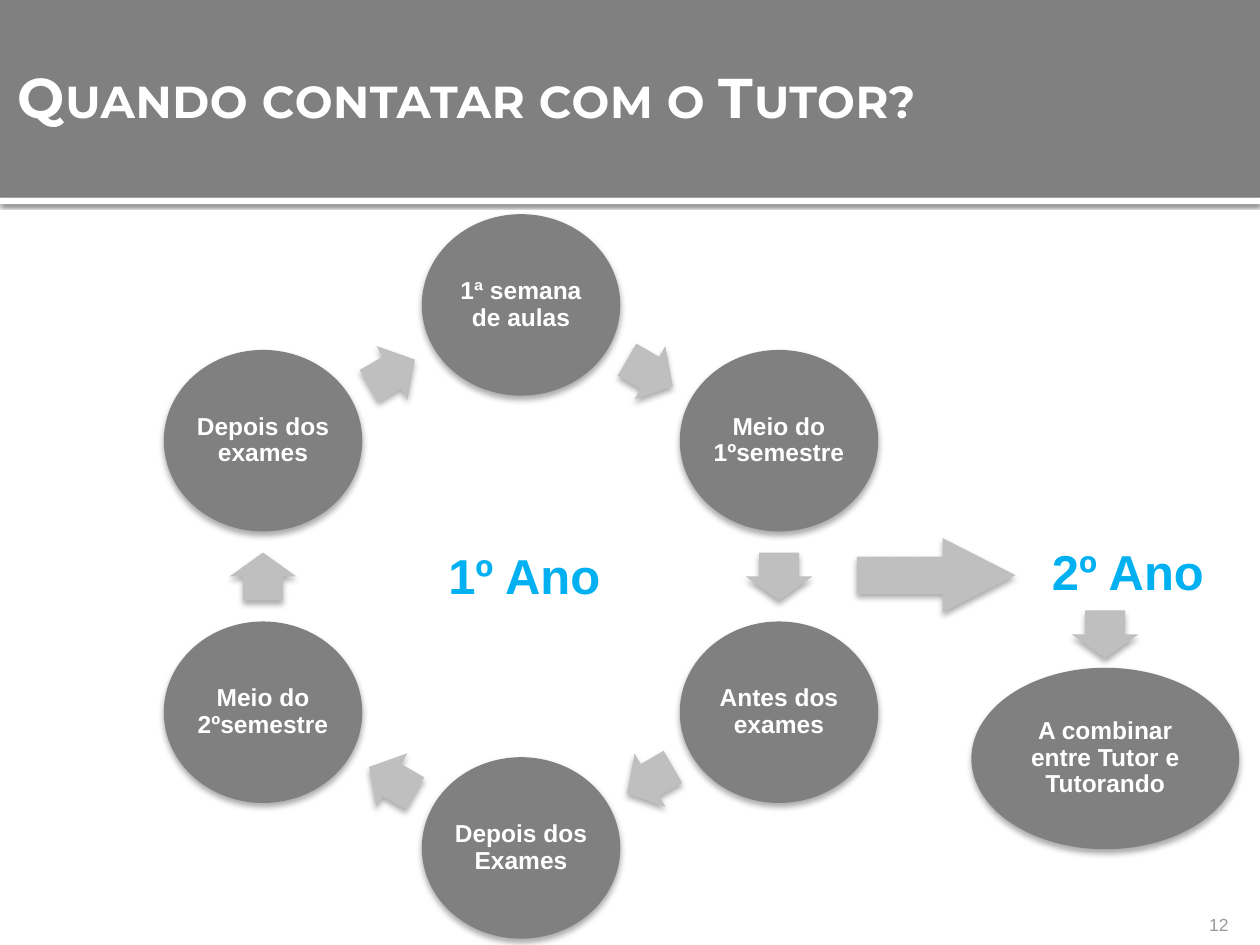
import dataclasses
import math

import lxml.etree
import pptx
import pptx.dml.color
import pptx.enum.shapes
import pptx.enum.text
import pptx.oxml.ns
import pptx.util

COLS, ROWS = 100, 75
KIND = pptx.enum.shapes.MSO_SHAPE
SIDE = pptx.enum.text.PP_ALIGN
HOLD = pptx.enum.text.MSO_ANCHOR


@dataclasses.dataclass(frozen=True)
class Theme:
    dark: str = "808080"
    pale: str = "BFBFBF"
    white: str = "FFFFFF"
    blue: str = "00B0F0"
    faint: str = "9B9A98"
    black: str = "000000"
    font: str = "Arial"
    display: str = "Montserrat"
    title: int = 32
    year: int = 28
    node: int = 14
    page: int = 10
    soft: tuple = (32, 3.5, 2.2)
    crisp: tuple = (60, 2.5, 0.8)


@dataclasses.dataclass(frozen=True)
class Box:
    x: float
    y: float
    w: float
    h: float

    def inner(self, x, y, w, h):
        return Box(self.x + x, self.y + y, w, h)

    def mid(self, x, y, w, h):
        return self.inner(x - w / 2, y - h / 2, w, h)

    def place(self):
        unit = pptx.util.Inches(10) / COLS
        return [round(v * unit) for v in (self.x, self.y, self.w, self.h)]


THEME = Theme()


def tint(code):
    return pptx.dml.color.RGBColor.from_string(code)


def shade(shape, look):
    alpha, blur, drop = look
    tag = pptx.oxml.ns.qn
    effects = shape._element.spPr.find(tag("a:effectLst"))
    cast = lxml.etree.SubElement(
        effects, tag("a:outerShdw"), blurRad=str(pptx.util.Pt(blur)),
        dist=str(pptx.util.Pt(drop)), dir="5400000", rotWithShape="0")
    hue = lxml.etree.SubElement(cast, tag("a:srgbClr"), val=THEME.black)
    lxml.etree.SubElement(hue, tag("a:alpha"), val=str(alpha * 1000))


def draw(slide, kind, box, fill, look=None, turn=0, bends=()):
    shape = slide.shapes.add_shape(kind, *box.place())
    shape.shadow.inherit = False
    shape.fill.solid()
    shape.fill.fore_color.rgb = tint(fill)
    shape.line.fill.background()
    shape.rotation = turn
    for i, bend in enumerate(bends):
        shape.adjustments[i] = bend
    if look:
        shade(shape, look)
    return shape


def write(shape, text, size, color, font=THEME.font, bold=True, side=SIDE.LEFT,
          hold=HOLD.TOP, pads=(0.1, 0.05, 0.1, 0.05), wrap=True, lead=None,
          after=None, caps=False):
    frame = shape.text_frame
    frame.word_wrap = wrap
    frame.vertical_anchor = hold
    (frame.margin_left, frame.margin_top,
     frame.margin_right, frame.margin_bottom) = map(pptx.util.Inches, pads)
    para = frame.paragraphs[0]
    para.alignment = side
    if lead:
        para.line_spacing = lead
    if after:
        para.space_after = pptx.util.Pt(after)
    run = para.add_run()
    run.text = text
    run.font.name = font
    run.font.size = pptx.util.Pt(size)
    run.font.bold = bold
    run.font.color.rgb = tint(color)
    if caps:
        props = run._r.get_or_add_rPr()
        props.set("cap", "small")
        props.set("spc", "40")


def label(slide, box, text, size, color, **form):
    write(slide.shapes.add_textbox(*box.place()), text, size, color, **form)


def node(slide, box, text):
    shape = draw(slide, KIND.OVAL, box, THEME.dark, THEME.soft)
    write(shape, text, THEME.node, THEME.white, side=SIDE.CENTER,
          hold=HOLD.MIDDLE, pads=(0, 0, 0, 0), lead=0.9, after=7)


def arrow(slide, box, turn=0, bends=(0.6, 0.5)):
    draw(slide, KIND.RIGHT_ARROW, box, THEME.pale, THEME.soft, turn, bends)


def header(slide, box):
    draw(slide, KIND.RECTANGLE, box.inner(0, box.h, box.w, 0.5),
         THEME.white, THEME.crisp)
    draw(slide, KIND.RECTANGLE, box, THEME.dark)
    label(slide, box.inner(0.4, 2.9, 96.1, 9.5), "Quando contatar com o Tutor?",
          THEME.title, THEME.white, font=THEME.display, hold=HOLD.MIDDLE,
          pads=(0.1, 0.05, 0.05, 0.05), caps=True)


def cycle(slide, box, steps):
    wide, high = 15.75, 14.4
    count = len(steps)

    def spot(i):
        angle = 2 * math.pi * i / count
        reach = (box.w - wide) / 2 / math.sin(math.pi / 3)
        return (box.w / 2 + reach * math.sin(angle),
                box.h / 2 - (box.h - high) / 2 * math.cos(angle))

    for i, step in enumerate(steps):
        here, there = spot(i), spot(i + 1)
        node(slide, box.mid(*here, wide, high), step)
        x, y = [(a + b) / 2 for a, b in zip(here, there)]
        size = (3.8, 5.3) if i % 3 == 1 else (4.2, 4.9)
        arrow(slide, box.mid(x, y, *size), 360 / count * (i + 0.5))
    label(slide, box.inner(21.6, 25.8, 15.4, 5.7), "1º Ano",
          THEME.year, THEME.blue, wrap=False)


def branch(slide, box):
    arrow(slide, box.inner(0, 0.2, 12.6, 5.9), bends=(0.5, 0.98))
    label(slide, box.inner(14.5, 0, 15, 5.7), "2º Ano",
          THEME.year, THEME.blue, wrap=False)
    node(slide, box.inner(9.1, 10.5, 21.25, 14.4),
         "A combinar entre Tutor e Tutorando")
    arrow(slide, box.mid(19.7, 7.85, 3.8, 5.3), 90)


def folio(slide, box):
    label(slide, box, "12", THEME.page, THEME.faint, bold=False,
          side=SIDE.RIGHT, hold=HOLD.BOTTOM, pads=(0, 0, 0, 0))


def main():
    deck = pptx.Presentation()
    deck.slide_width = pptx.util.Inches(10)
    deck.slide_height = round(deck.slide_width * ROWS / COLS)
    slide = deck.slides.add_slide(deck.slide_layouts[6])
    header(slide, Box(0, 0, COLS, 15.7))
    folio(slide, Box(89.2, 70.2, 8.3, 4))
    cycle(slide, Box(13, 17, 56.7, 57.5), [
        "1ª semana de aulas", "Meio do 1ºsemestre", "Antes dos exames",
        "Depois dos Exames", "Meio do 2ºsemestre", "Depois dos exames"])
    branch(slide, Box(68, 42.5, 30.35, 24.9))
    deck.save("out.pptx")


if __name__ == "__main__":
    main()
